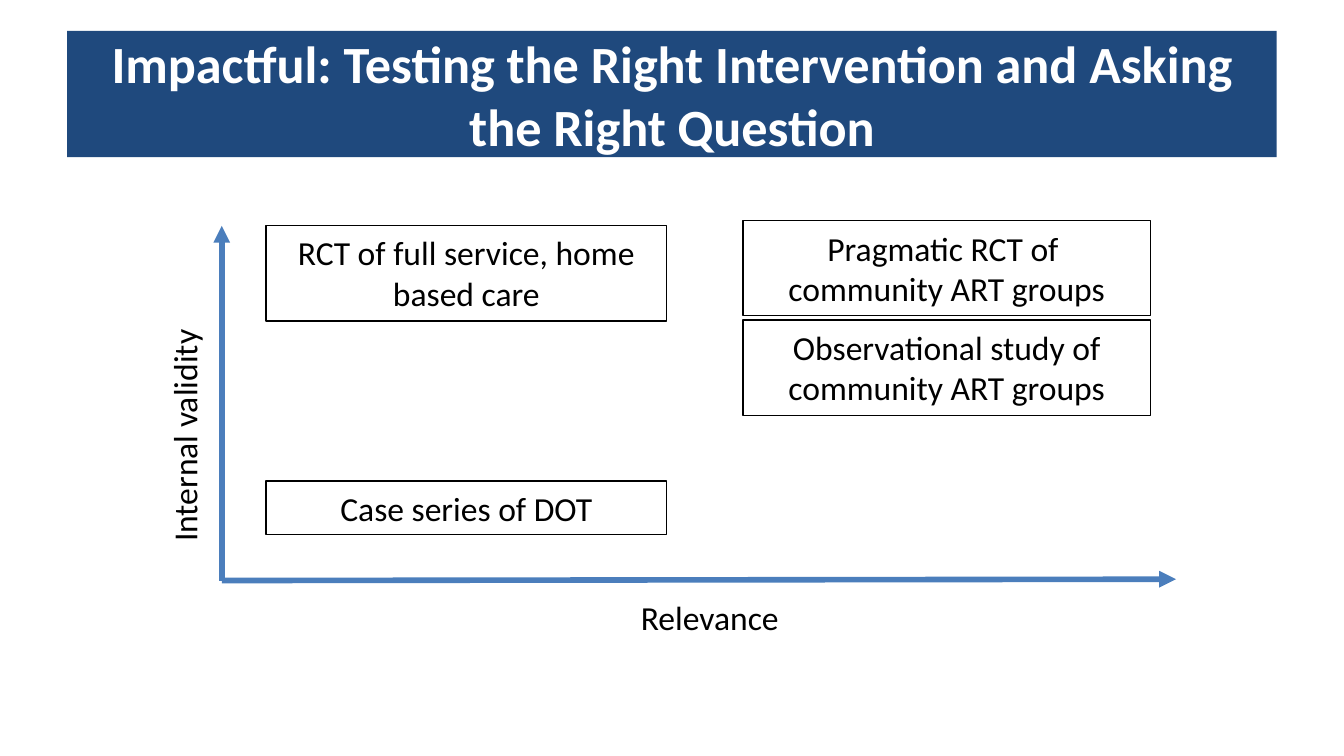
from lxml import etree
from pptx import Presentation
from pptx.dml.color import RGBColor
from pptx.enum import shapes, text
from pptx.oxml.ns import qn
from pptx.util import Inches, Pt

NAVY = RGBColor(0x1F, 0x49, 0x7D)
BLUE = RGBColor(0x4B, 0x7E, 0xBC)
BLACK = RGBColor(0, 0, 0)
WHITE = RGBColor(255, 255, 255)


def write(tf, content, size=18, color=BLACK, bold=False, align=None,
          anchor=text.MSO_ANCHOR.TOP, wrap=True,
          fit=text.MSO_AUTO_SIZE.SHAPE_TO_FIT_TEXT):
    """Fill a text frame, one paragraph per line of content."""
    tf.auto_size = fit
    tf.word_wrap = wrap
    tf.vertical_anchor = anchor
    for i, line in enumerate(content.split("\n")):
        p = tf.add_paragraph() if i else tf.paragraphs[0]
        p.alignment = align
        r = p.add_run()
        r.text = line
        r.font.name = "Calibri"
        r.font.size = Pt(size)
        r.font.bold = bold
        r.font.color.rgb = color


class Diagram:
    """Holds the current slide and the style of its elements."""
    axis_color, axis_width = BLUE, Pt(3)
    box_color, box_width = BLACK, Pt(0.75)

    def __init__(self, slide):
        self.s = slide

    def title(self, content, x, y, w, h):
        sp = self.s.shapes.title
        sp.left, sp.top, sp.width, sp.height = map(Inches, (x, y, w, h))
        sp.fill.solid()
        sp.fill.fore_color.rgb = NAVY
        write(sp.text_frame, content, size=28, color=WHITE, bold=True,
              align=text.PP_ALIGN.CENTER, anchor=text.MSO_ANCHOR.MIDDLE,
              fit=text.MSO_AUTO_SIZE.NONE)

    def axis(self, start, end):
        line = self.s.shapes.add_connector(
            shapes.MSO_CONNECTOR.STRAIGHT, *map(Inches, (*start, *end)))
        line.line.color.rgb = self.axis_color
        line.line.width = self.axis_width
        ln = line.line._get_or_add_ln()
        etree.SubElement(ln, qn("a:headEnd"), type="triangle")
        etree.SubElement(line._element.spPr, qn("a:effectLst"))

    def label(self, content, x, y, w, h, rotation=0):
        sp = self.s.shapes.add_textbox(*map(Inches, (x, y, w, h)))
        sp.rotation = rotation
        write(sp.text_frame, content, wrap=False)

    def box(self, content, x, y, w, h, anchor=text.MSO_ANCHOR.TOP):
        sp = self.s.shapes.add_shape(
            shapes.MSO_SHAPE.RECTANGLE, *map(Inches, (x, y, w, h)))
        sp.shadow.inherit = False
        sp.fill.background()
        sp.line.color.rgb = self.box_color
        sp.line.width = self.box_width
        write(sp.text_frame, content, align=text.PP_ALIGN.CENTER, anchor=anchor)


def main():
    # Widescreen page, 16:9
    prs = Presentation()
    prs.slide_width = Inches(10)
    prs.slide_height = prs.slide_width * 9 // 16
    d = Diagram(prs.slides.add_slide(prs.slide_layouts[5]))

    # Title band
    d.title("Impactful: Testing the Right Intervention and Asking the Right Question",
            0.5, 0.23, 9, 0.94)

    # Axes, each with its arrowhead at the first point, and their names
    origin = (1.65, 4.32)
    d.axis((1.65, 1.68), origin)
    d.axis((8.75, 4.31), origin)
    d.label("Relevance", 4.67, 4.39, 1.3, 0.4)
    d.label("Internal validity", 0.47, 3.03, 1.8, 0.4, rotation=270)

    # Study designs: low relevance on the left, high on the right
    left, left_w = 1.98, 2.98
    right, right_w = 5.53, 3.03
    one_line, two_lines = 0.4, 0.71
    d.box("RCT of full service, home based care", left, 1.68, left_w, two_lines)
    d.box("Observational study of community ART groups",
          right, 2.38, right_w, two_lines)
    d.box("Pragmatic RCT of \ncommunity ART groups", right, 1.64, right_w, two_lines,
          anchor=text.MSO_ANCHOR.MIDDLE)
    d.box("Case series of DOT", left, 3.58, left_w, one_line)

    prs.save("out.pptx")


if __name__ == "__main__":
    main()
